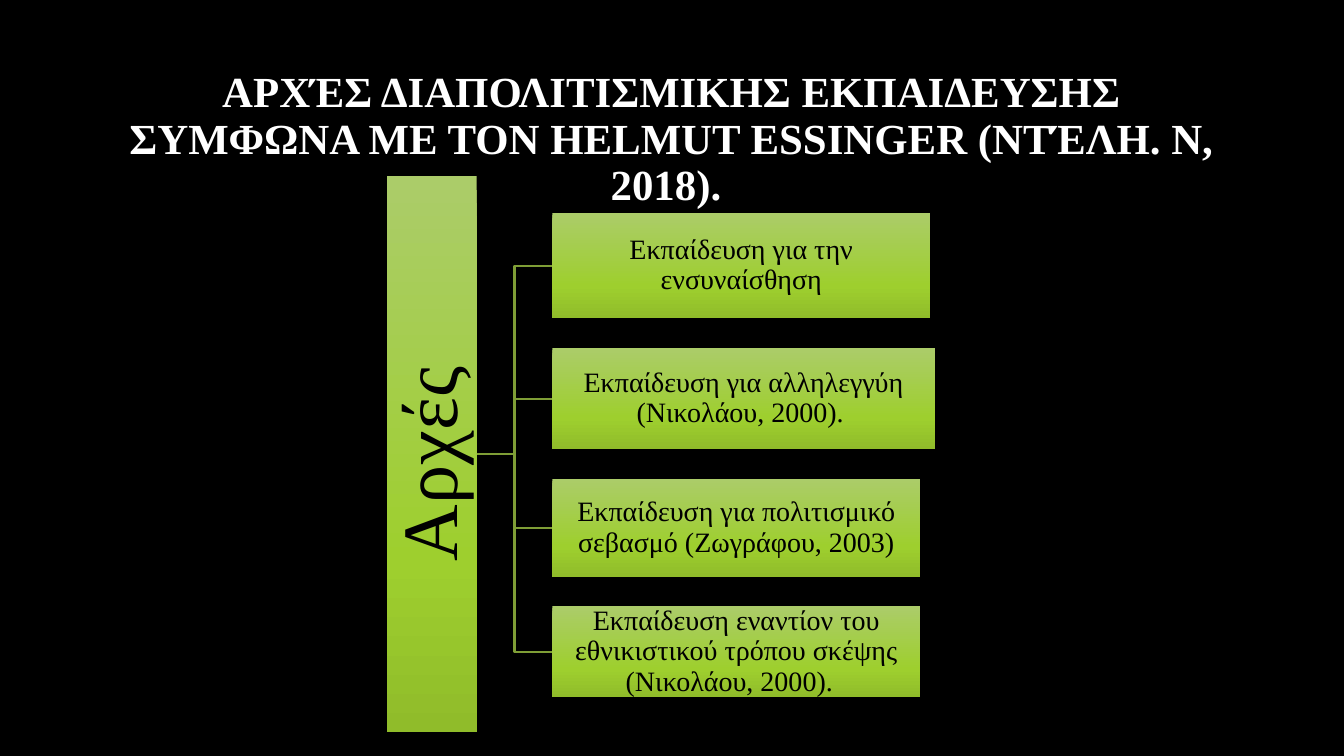
import copy
from dataclasses import dataclass

import pptx
import pptx.dml.color
import pptx.enum.shapes
import pptx.enum.text
import pptx.oxml
import pptx.oxml.ns
import pptx.util

Pt = pptx.util.Pt
qn = pptx.oxml.ns.qn
rgb = pptx.dml.color.RGBColor.from_string


@dataclass(frozen=True)
class Theme:
    font: str = "Times New Roman"
    background: str = "000000"
    title_color: str = "FFFFFF"
    box_text: str = "000000"
    connector: str = "7F9E36"
    gradient: tuple = ((0, "ABCC69"), (0.69, "9ECF2E"), (1, "90BC2A"))
    title_size: float = 30.6
    root_size: float = 56
    branch_size: float = 20


theme = Theme()


def write_text(shape, text, size, color, bold=False, margins=(7.2, 3.6)):
    frame = shape.text_frame
    frame.word_wrap = True
    frame.vertical_anchor = pptx.enum.text.MSO_ANCHOR.MIDDLE
    frame.margin_left = frame.margin_right = Pt(margins[0])
    frame.margin_top = frame.margin_bottom = Pt(margins[1])
    paragraph = frame.paragraphs[0]
    paragraph.alignment = pptx.enum.text.PP_ALIGN.CENTER
    paragraph.line_spacing = 0.9
    run = paragraph.add_run()
    run.text = text
    run.font.name = theme.font
    run.font.size = Pt(size)
    run.font.bold = bold
    run.font.color.rgb = rgb(color)


def add_gradient_box(left, top, width, height):
    box = slide.shapes.add_shape(
        pptx.enum.shapes.MSO_SHAPE.RECTANGLE, Pt(left), Pt(top), Pt(width), Pt(height)
    )
    box.shadow.inherit = False
    box.line.fill.background()
    box.fill.gradient()
    box.fill.gradient_angle = 270
    stop_list = next(box._element.spPr.iter(qn("a:gsLst")))
    stop_list.append(copy.deepcopy(stop_list[-1]))
    for stop, (position, color) in zip(box.fill.gradient_stops, theme.gradient):
        stop.position = position
        stop.color.rgb = rgb(color)
    return box


presentation = pptx.Presentation()
presentation.slide_width = Pt(960)
presentation.slide_height = Pt(540)
slide = presentation.slides.add_slide(presentation.slide_layouts[6])
slide.background.fill.solid()
slide.background.fill.fore_color.rgb = rgb(theme.background)

title = slide.shapes.add_textbox(Pt(72), Pt(48), Pt(815), Pt(104.5))
write_text(
    title,
    "ΑΡΧΈΣ ΔΙΑΠΟΛΙΤΙΣΜΙΚΗΣ ΕΚΠΑΙΔΕΥΣΗΣ ΣΥΜΦΩΝΑ ΜΕ ΤΟΝ HELMUT ESSINGER (ΝΤΈΛΗ. Ν, 2018). ",
    size=theme.title_size,
    color=theme.title_color,
    bold=True,
)

root = add_gradient_box(276.5, 126, 64, 397)
root.text_frame._txBody.bodyPr.set("vert", "vert270")
write_text(root, "Αρχές ", size=theme.root_size, color=theme.box_text, margins=(2.8, 2.8))

branches = [
    ("Εκπαίδευση για την ενσυναίσθηση", 270, 75.5),
    ("Εκπαίδευση για αλληλεγγύη (Νικολάου, 2000). ", 273.5, 72.5),
    ("Εκπαίδευση για πολιτισμικό σεβασμό (Ζωγράφου, 2003)", 263, 70),
    ("Εκπαίδευση εναντίον του εθνικιστικού τρόπου σκέψης (Νικολάου, 2000).  ", 263, 65),
]
branch_left, branch_top, branch_gap = 394.5, 152, 21
for text, width, height in branches:
    branch = add_gradient_box(branch_left, branch_top, width, height)
    write_text(branch, text, size=theme.branch_size, color=theme.box_text, margins=(0.9, 0.9))
    branch_top += height + branch_gap

    connector = slide.shapes.add_connector(
        pptx.enum.shapes.MSO_CONNECTOR.ELBOW,
        root.left + root.width, root.top + root.height // 2,
        branch.left, branch.top + branch.height // 2,
    )
    connector.begin_connect(root, 3)
    connector.end_connect(branch, 1)
    connector.line.color.rgb = rgb(theme.connector)
    connector.line.width = Pt(1.5)
    connector._element.spPr.append(pptx.oxml.parse_xml(
        '<a:effectLst xmlns:a="http://schemas.openxmlformats.org/drawingml/2006/main"/>'
    ))

presentation.save("out.pptx")
